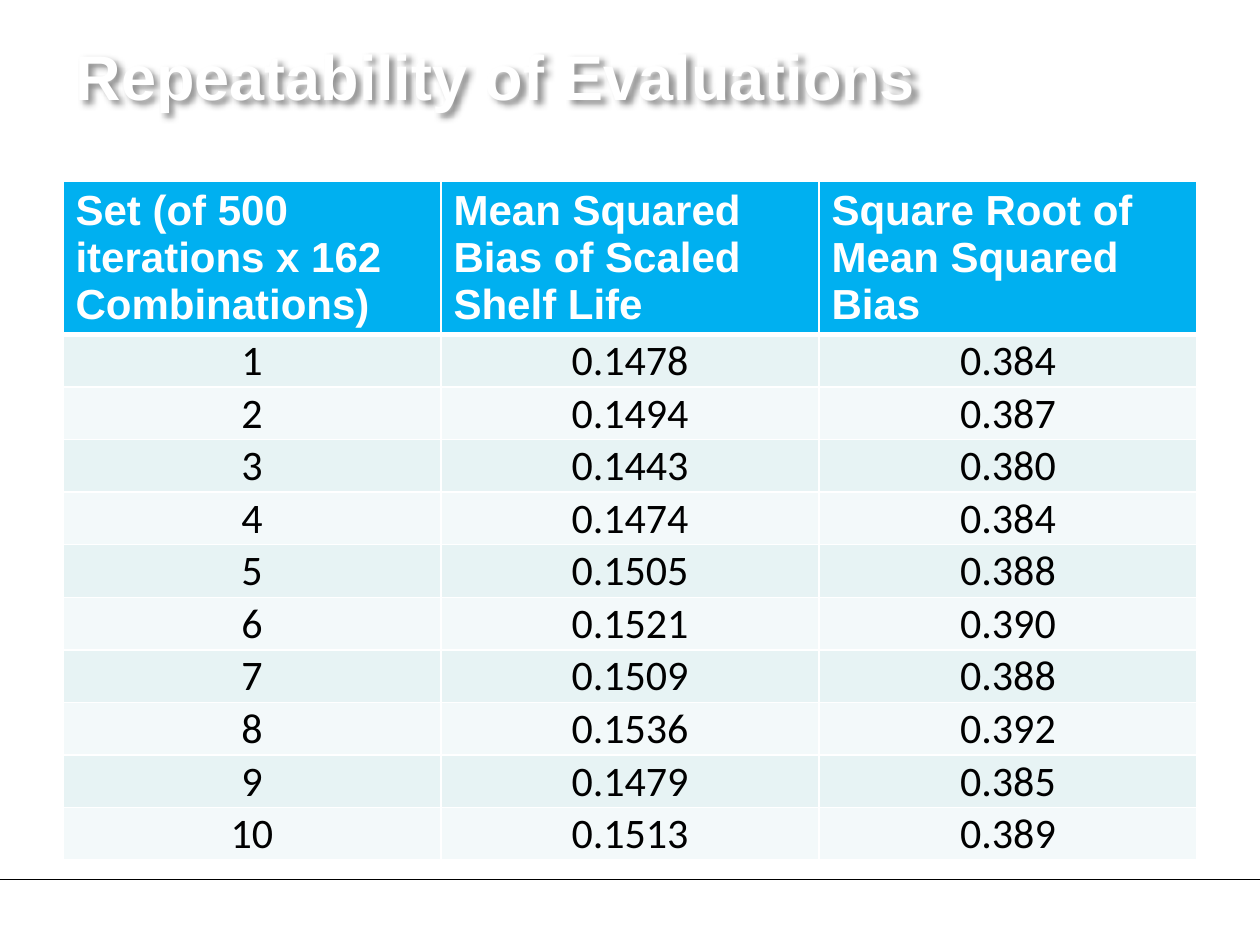
"""Build a slide with a title, a table of evaluation sets and a footer rule."""
from dataclasses import dataclass

from lxml import etree
from pptx import Presentation
from pptx import util as u
from pptx.dml.color import RGBColor
from pptx.enum import shapes, text
from pptx.oxml import ns, parse_xml

HEADERS = [
    "Set (of 500 iterations x 162 Combinations)",
    "Mean Squared Bias of Scaled Shelf Life",
    "Square Root of Mean Squared Bias",
]
BIASES = [
    ("0.1478", "0.384"),
    ("0.1494", "0.387"),
    ("0.1443", "0.380"),
    ("0.1474", "0.384"),
    ("0.1505", "0.388"),
    ("0.1521", "0.390"),
    ("0.1509", "0.388"),
    ("0.1536", "0.392"),
    ("0.1479", "0.385"),
    ("0.1513", "0.389"),
]


@dataclass(frozen=True)
class Theme:
    heading_font: str = "Arial"
    body_font: str = "Calibri"
    title_size: int = 36
    table_size: int = 24
    light: str = "FFFFFF"
    dark: str = "000000"
    header: str = "00B0F0"
    bands: tuple = ("E7F3F4", "F3F9FA")


def write(frame, words, *, font, size, color, bold=False, align=text.PP_ALIGN.LEFT):
    para = frame.paragraphs[0]
    para.alignment = align
    span = para.add_run()
    span.text = words
    span.font.size = u.Pt(size)
    span.font.bold = bold
    span.font.color.rgb = RGBColor.from_string(color)
    span.font.name = font


def border(cell, **widths):
    properties = cell._tc.get_or_add_tcPr()
    for index, (side, width) in enumerate(widths.items()):
        line = parse_xml(
            f'<a:ln{side} {ns.nsdecls("a")} w="{u.Pt(width)}"><a:solidFill>'
            f'<a:srgbClr val="{Theme.light}"/></a:solidFill></a:ln{side}>'
        )
        properties.insert(index, line)


class SlideBuilder:
    def __init__(self, deck, theme):
        self.deck = deck
        self.theme = theme
        self.page = deck.slides.add_slide(deck.slide_layouts[5])

    def area(self, left, top, width, height):
        across, down = self.deck.slide_width, self.deck.slide_height
        return [round(share * full) for share, full in
                zip((left, top, width, height), (across, down, across, down))]

    def rule(self, top):
        left, y, width, _ = self.area(0, top, 1, 0)
        line = self.page.shapes.add_connector(
            shapes.MSO_CONNECTOR.STRAIGHT, left, y, left + width, y)
        line.line.width = u.Pt(0.5)
        line.line.color.rgb = RGBColor.from_string(self.theme.dark)
        etree.SubElement(line._element.spPr, ns.qn("a:effectLst"))

    def title(self, words, *shares):
        box = self.page.shapes.title
        box.left, box.top, box.width, box.height = self.area(*shares)
        box.fill.background()
        box.line.fill.background()
        box.text_frame.word_wrap = True
        box.text_frame.vertical_anchor = text.MSO_ANCHOR.MIDDLE
        write(box.text_frame, words, font=self.theme.heading_font,
              size=self.theme.title_size, color=self.theme.light, bold=True)
        shadow = parse_xml(
            f'<a:effectLst {ns.nsdecls("a")}><a:outerShdw blurRad="{u.Pt(3)}" '
            f'dist="{u.Pt(3)}" dir="2700000" algn="tl"><a:srgbClr val="{self.theme.dark}">'
            '<a:alpha val="43000"/></a:srgbClr></a:outerShdw></a:effectLst>'
        )
        box._element.spPr.append(shadow)

    def table(self, headers, records, *shares, header_share):
        left, top, width, height = self.area(*shares)
        table = self.page.shapes.add_table(
            len(records) + 1, len(headers), left, top, width, height).table
        table.horz_banding = False
        table.rows[0].height = round(height * header_share)
        for row in list(table.rows)[1:]:
            row.height = round(height * (1 - header_share) / len(records))
        for column, words in enumerate(headers):
            self.header_cell(table.cell(0, column), words)
        for row, record in enumerate(records, 1):
            for column, words in enumerate(record):
                self.body_cell(table.cell(row, column), words, row)

    def fill(self, cell, color):
        cell.fill.solid()
        cell.fill.fore_color.rgb = RGBColor.from_string(color)

    def header_cell(self, cell, words):
        self.fill(cell, self.theme.header)
        border(cell, L=1, R=1, T=1, B=3)
        write(cell.text_frame, words, font=self.theme.heading_font,
              size=self.theme.table_size, color=self.theme.light, bold=True)

    def body_cell(self, cell, words, row):
        self.fill(cell, self.theme.bands[(row - 1) % 2])
        border(cell, L=1, R=1, T=1, B=1)
        cell.margin_left = cell.margin_right = cell.margin_top = u.Inches(0.01)
        cell.margin_bottom = 0
        cell.vertical_anchor = text.MSO_ANCHOR.BOTTOM
        write(cell.text_frame, words, font=self.theme.body_font,
              size=self.theme.table_size, color=self.theme.dark,
              align=text.PP_ALIGN.CENTER)


def main():
    deck = Presentation()
    deck.slide_width, deck.slide_height = u.Inches(10), u.Inches(7.5)
    builder = SlideBuilder(deck, Theme())
    builder.rule(6.98 / 7.5)
    builder.title("Repeatability of Evaluations", 0.05, -0.03 / 7.5, 0.9, 1.25 / 7.5)
    records = [(str(number), *biases) for number, biases in enumerate(BIASES, 1)]
    builder.table(HEADERS, records, 0.05, 1.44 / 7.5, 0.9, 5.34 / 7.5,
                  header_share=1.19 / 5.34)
    deck.save("out.pptx")


if __name__ == "__main__":
    main()
